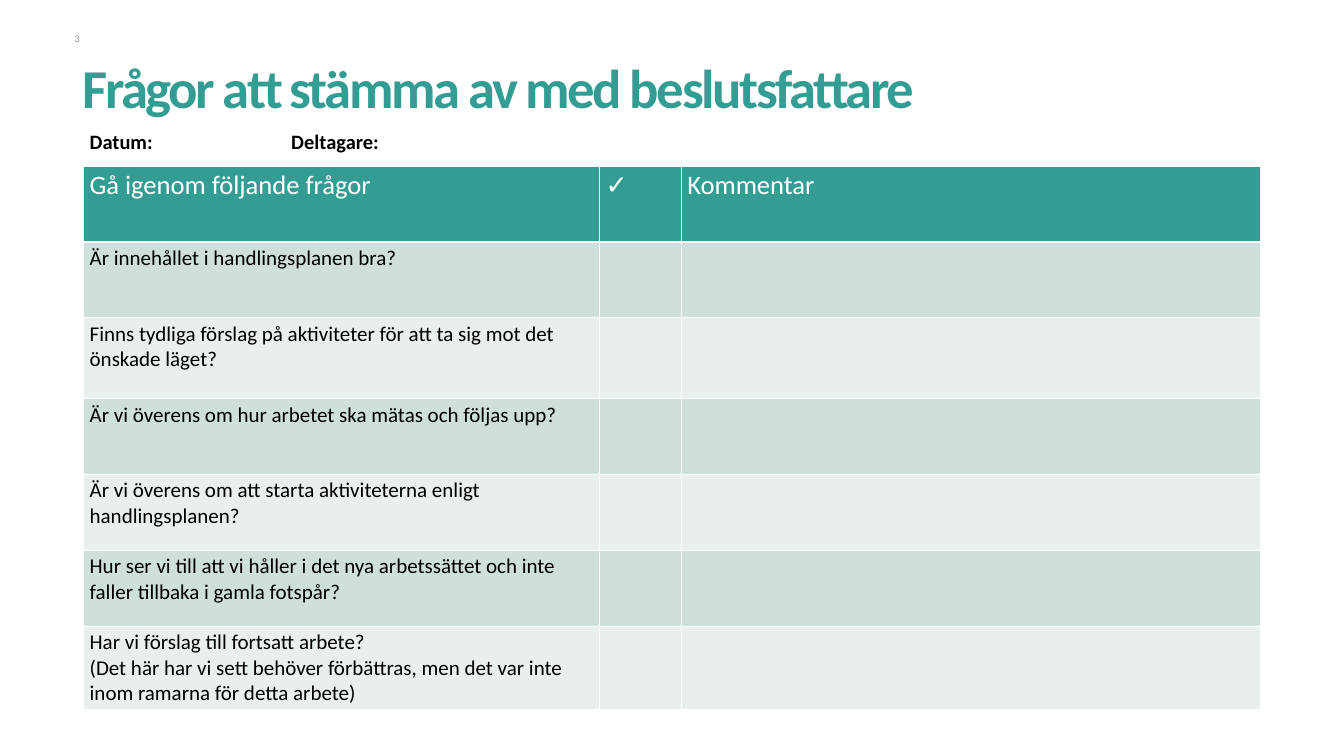
import pptx
import pptx.dml.color
import pptx.enum.text
import pptx.util
from lxml import etree

Cm, Pt = pptx.util.Cm, pptx.util.Pt
HUES = {"teal": "339D94", "dark": "CEDFDC", "light": "E8EFEE",
        "white": "FFFFFF", "black": "000000", "grey": "8C8C8C"}
COLS = [13, 2.06, 14.61]
ROWS = [1.91, 1.91, 2.04, 1.91, 1.91, 1.91, 2.04]
HEADS = ["Gå igenom följande frågor", "✓", "Kommentar"]
ASKS = [
    ["Är innehållet i handlingsplanen bra?"],
    ["Finns tydliga förslag på aktiviteter för att ta sig mot det önskade läget?"],
    ["Är vi överens om hur arbetet ska mätas och följas upp?"],
    ["Är vi överens om att starta aktiviteterna enligt handlingsplanen?"],
    ["Hur ser vi till att vi håller i det nya arbetssättet och inte faller tillbaka i gamla fotspår?"],
    ["Har vi förslag till fortsatt arbete?",
     "(Det här har vi sett behöver förbättras, men det var inte inom ramarna för detta arbete)"],
]


class Sheet:
    """Holds the text style and the current slide, and adds elements to it."""

    def __init__(self, slide, face):
        self.slide = slide
        self.face = face

    def color(self, name):
        return pptx.dml.color.RGBColor.from_string(HUES[name])

    def pad(self, item, left, top, right, bottom):
        item.margin_left, item.margin_top = Cm(left), Cm(top)
        item.margin_right, item.margin_bottom = Cm(right), Cm(bottom)

    def add_text(self, para, text, size, hue, bold=False):
        run = para.add_run()
        run.text = text
        run.font.name = self.face
        run.font.size = Pt(size)
        run.font.bold = bold
        run.font.color.rgb = self.color(hue)
        return run

    def title(self, text, left, top, width, height):
        shape = self.slide.shapes.title
        shape.left, shape.top = Cm(left), Cm(top)
        shape.width, shape.height = Cm(width), Cm(height)
        frame = shape.text_frame
        frame.auto_size = pptx.enum.text.MSO_AUTO_SIZE.NONE
        frame.vertical_anchor = pptx.enum.text.MSO_ANCHOR.BOTTOM
        self.pad(frame, 0, 0, 0, 0.2)
        para = frame.paragraphs[0]
        para.alignment = pptx.enum.text.PP_ALIGN.LEFT
        para.line_spacing = 0.85
        run = self.add_text(para, text, 39.1, "teal", True)
        run._r.get_or_add_rPr().set("spc", "-170")

    def label(self, left, top, width, height):
        box = self.slide.shapes.add_textbox(Cm(left), Cm(top), Cm(width), Cm(height))
        box.text_frame.word_wrap = True
        return box.text_frame

    def number(self, text, *place):
        frame = self.label(*place)
        self.pad(frame, 0, 0, 0, 0)
        para = frame.paragraphs[0]
        para.alignment = pptx.enum.text.PP_ALIGN.RIGHT
        self.add_text(para, text, 7.3, "grey")

    def fields(self, text, stop, *place):
        para = self.label(*place).paragraphs[0]
        props = para._p.get_or_add_pPr()
        space = props.nsmap["a"]
        tabs = etree.SubElement(props, f"{{{space}}}tabLst")
        etree.SubElement(tabs, f"{{{space}}}tab", pos=str(int(Cm(stop))), algn="l")
        self.add_text(para, text, 14.6, "black", True)

    def cell(self, cell, lines, size, hue, fill):
        cell.fill.solid()
        cell.fill.fore_color.rgb = self.color(fill)
        self.pad(cell, 0.15, 0.08, 0.15, 0.08)
        frame = cell.text_frame
        for i, line in enumerate(lines):
            para = frame.add_paragraph() if i else frame.paragraphs[0]
            self.add_text(para, line, size, hue)

    def table(self, left, top):
        table = self.slide.shapes.add_table(
            len(ROWS), len(COLS), Cm(left), Cm(top), Cm(sum(COLS)), Cm(sum(ROWS))).table
        for col, width in zip(table.columns, COLS):
            col.width = Cm(width)
        for row, height in zip(table.rows, ROWS):
            row.height = Cm(height)
        for c, head in enumerate(HEADS):
            self.cell(table.cell(0, c), [head], 19, "white", "teal")
        for r, ask in enumerate(ASKS, 1):
            fill = "dark" if r % 2 else "light"
            for c, lines in enumerate([ask, [], []]):
                self.cell(table.cell(r, c), lines, 15, "black", fill)


def main():
    deck = pptx.Presentation()
    deck.slide_width, deck.slide_height = Cm(33.87), Cm(19.05)
    sheet = Sheet(deck.slides.add_slide(deck.slide_layouts[5]), "Calibri")
    sheet.table(2.11, 4.19)
    sheet.title("Frågor att stämma av med beslutsfattare", 2.08, 1.47, 29.67, 1.75)
    sheet.number("3", 1.4, 0.81, 0.61, 0.3)
    sheet.fields("Datum:\tDeltagare:", 5.08, 2.01, 3.12, 23.7, 0.89)
    deck.save("out.pptx")


if __name__ == "__main__":
    main()
